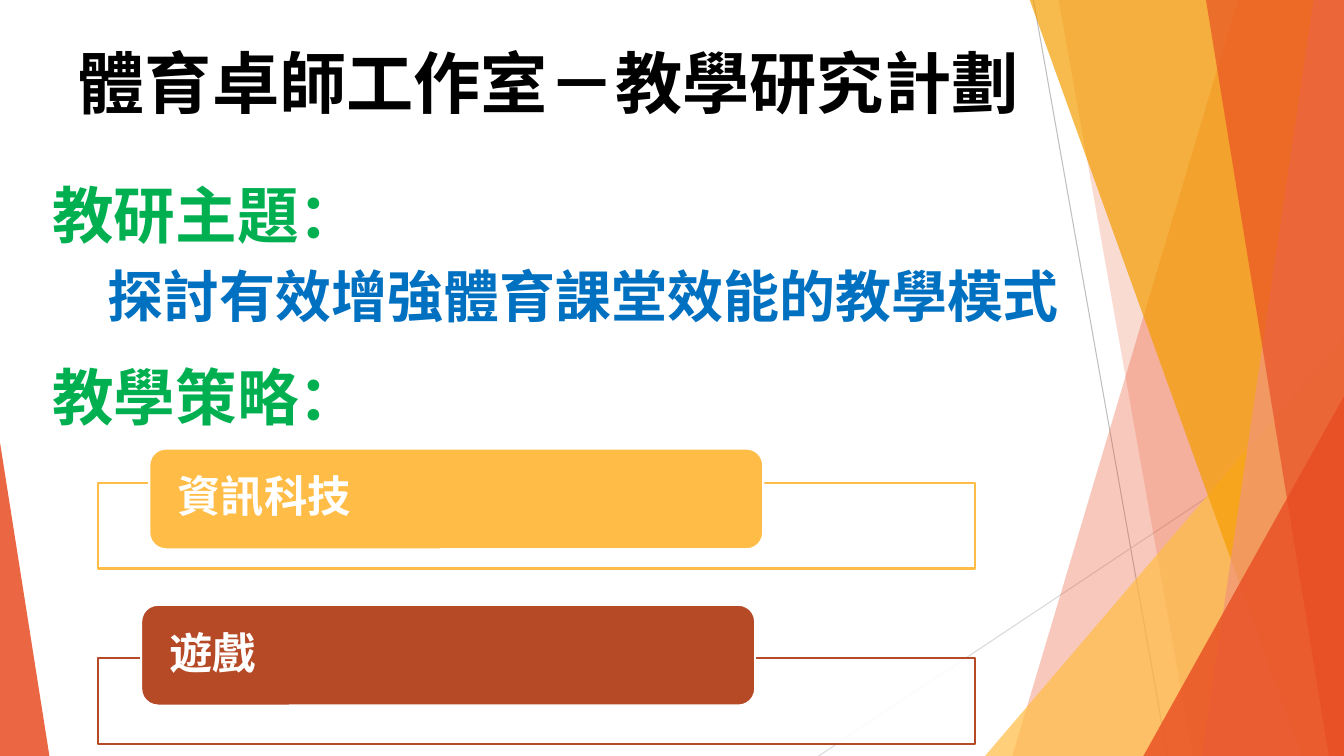
"""Build the slide on the teaching research plan of the PE studio."""
from lxml import etree
from pptx import Presentation
from pptx.dml.color import RGBColor
from pptx.enum.shapes import MSO_CONNECTOR, MSO_SHAPE
from pptx.enum.text import MSO_ANCHOR, MSO_AUTO_SIZE, PP_ALIGN
from pptx.oxml.ns import qn
from pptx.util import Inches, Pt

LINE = MSO_CONNECTOR.STRAIGHT
RECT, ROUND = MSO_SHAPE.RECTANGLE, MSO_SHAPE.ROUNDED_RECTANGLE
TRIANGLE = MSO_SHAPE.ISOSCELES_TRIANGLE
TOP, MIDDLE = MSO_ANCHOR.TOP, MSO_ANCHOR.MIDDLE
LEFT, FIXED = PP_ALIGN.LEFT, MSO_AUTO_SIZE.NONE
FACE = "Noto Sans CJK SC"
RED, GOLD, RUST, WHITE = "E84C22", "FFBD47", "B64926", "FFFFFF"
GREEN, BLUE, BLACK = "00B050", "0070C0", "000000"


def paint(shape, fill, alpha=100, edge=None):
    """Fill a shape, with opacity in percent, and draw its edge if given."""
    shape.shadow.inherit = False
    shape.fill.solid()
    shape.fill.fore_color.rgb = RGBColor.from_string(fill)
    if alpha < 100:
        tint = shape.fill._xPr.find(qn("a:solidFill"))[0]
        etree.SubElement(tint, qn("a:alpha"), val=str(alpha * 1000))
    if edge:
        shape.line.color.rgb = RGBColor.from_string(edge)
        shape.line.width = Pt(1.5)
    else:
        shape.line.fill.background()


def write(shape, text, size, color, anchor=TOP, inset=0.1, space=1.0):
    """Put one bold line of text in a shape."""
    frame = shape.text_frame
    form = {"word_wrap": True, "auto_size": FIXED, "vertical_anchor": anchor,
            "margin_left": Inches(inset), "margin_right": Inches(inset),
            "margin_top": Inches(0.05), "margin_bottom": Inches(0.05)}
    for key, value in form.items():
        setattr(frame, key, value)
    para = frame.paragraphs[0]
    para.alignment, para.line_spacing = LEFT, space
    run = para.add_run()
    run.text = text
    for key, value in {"name": FACE, "size": Pt(size), "bold": True}.items():
        setattr(run.font, key, value)
    run.font.color.rgb = RGBColor.from_string(color)
    etree.SubElement(run.font._element, qn("a:ea"), typeface=FACE)


deck = Presentation()
deck.slide_width, deck.slide_height = Inches(13.33), Inches(7.5)
slide = deck.slides.add_slide(deck.slide_layouts[5])
shapes = slide.shapes

rays = [((10.25, 0, 11.58, 7.5), "BFBFBF"), ((13.33, 4.03, 8.12, 7.5), "D9D9D9")]
for ends, color in rays:
    ray = shapes.add_connector(LINE, *map(Inches, ends))
    ray.line.color.rgb = RGBColor.from_string(color)
    ray.line.width = Pt(0.75)
    etree.SubElement(ray._element.spPr, qn("a:effectLst"))

# Bands give top left, top right, bottom right and bottom left x.
bands = [((12.28, 10.04), RED, 30), ((10.5, 11.83), RED, 20),
         ((10.21, 12.91), "F49D00", 70), ((13.03, 11.92), "F1947A", 70),
         ((11.96, 13.18), RED, 65)]
peaks = [((9.77, 3.33, 3.56, 4.17), 1, GOLD, 72),
         ((11.34, 3.93, 1.99, 3.57), 1, RED, 80),
         ((0, 4.39, 0.49, 3.11), 0, RED, 85)]
for shard in bands[:2] + peaks[:1] + bands[2:] + peaks[1:]:
    if shard in bands:
        (top, foot), color, alpha = shard
        pen = shapes.build_freeform(Inches(top), Inches(-0.01))
        spots = [(13.33, -0.01), (13.33, 7.5), (foot, 7.5)]
        pen.add_line_segments([(Inches(x), Inches(y)) for x, y in spots])
        shape = pen.convert_to_shape()
    else:
        box, tip, color, alpha = shard
        shape = shapes.add_shape(TRIANGLE, *map(Inches, box))
        shape.adjustments[0] = tip
    paint(shape, color, alpha)

title = shapes.title
place = {"left": 0.67, "top": 0.36, "width": 9.66, "height": 0.91}
for key, value in place.items():
    setattr(title, key, Inches(value))
write(title, "體育卓師工作室－教學研究計劃", 48, BLACK)

lines = [("教研主題：", (0.42, 1.71, 7.29, 0.84), 44, GREEN),
         ("探討有效增強體育課堂效能的教學模式", (0.97, 2.55, 9.74, 0.77), 40, BLUE),
         ("教學策略：", (0.42, 3.51, 9.4, 0.75), 44, GREEN)]
for text, box, size, color in lines:
    write(shapes.add_textbox(*map(Inches, box)), text, size, color)

cards = [("資訊科技", 1.48, 4.45, 4.79, GOLD), ("遊戲", 1.4, 6, 6.53, RUST)]
for text, left, top, base, color in cards:
    frame = shapes.add_shape(RECT, *map(Inches, (0.97, base, 8.7, 0.85)))
    paint(frame, WHITE, 90, color)
    card = shapes.add_shape(ROUND, *map(Inches, (left, top, 6.09, 1)))
    paint(card, color, edge=WHITE)
    write(card, text, 31, WHITE, MIDDLE, 0.23, 0.9)

deck.save("out.pptx")
